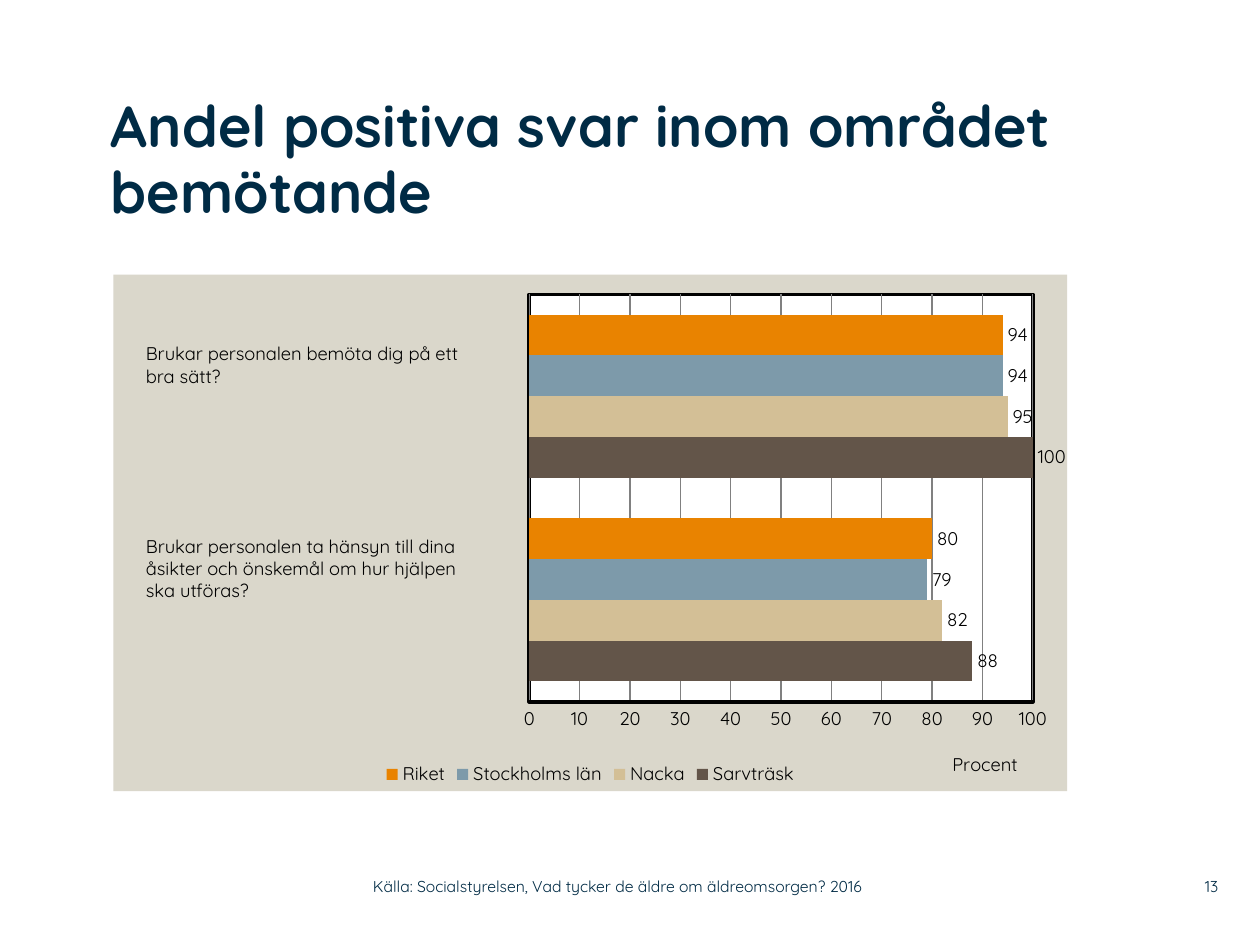
from dataclasses import dataclass

from lxml import etree
from pptx import Presentation
from pptx.chart.data import CategoryChartData
from pptx.dml.color import RGBColor
from pptx.enum.chart import (
    XL_CHART_TYPE, XL_LABEL_POSITION, XL_LEGEND_POSITION, XL_TICK_MARK)
from pptx.enum.text import MSO_ANCHOR, MSO_AUTO_SIZE, PP_ALIGN
from pptx.oxml import parse_xml
from pptx.oxml.ns import nsdecls, qn
from pptx.util import Inches, Pt

BAR_CLUSTERED = XL_CHART_TYPE.BAR_CLUSTERED
OUTSIDE_END = XL_LABEL_POSITION.OUTSIDE_END
LEGEND_BOTTOM = XL_LEGEND_POSITION.BOTTOM
NO_TICK = XL_TICK_MARK.NONE
TOP, MIDDLE = MSO_ANCHOR.TOP, MSO_ANCHOR.MIDDLE
FIT_SHAPE = MSO_AUTO_SIZE.SHAPE_TO_FIT_TEXT
LEFT, RIGHT = PP_ALIGN.LEFT, PP_ALIGN.RIGHT


@dataclass(frozen=True)
class Theme:
    """Font, colours and type sizes of the slide."""
    font: str = "Quicksand"
    navy: str = "002B45"
    black: str = "000000"
    panel: str = "DAD7CB"
    plot: str = "FFFFFF"
    grid: str = "808080"
    title_size: float = 33
    body_size: float = 10.5
    footer_size: float = 9


THEME = Theme()
CATEGORIES = ["1", "2"]
SERIES = [
    ("Sarvträsk", (88, 100), "635549"),
    ("Nacka", (82, 95), "D3BF96"),
    ("Stockholms län", (79, 94), "7D9AAA"),
    ("Riket", (80, 94), "E98300"),
]
QUESTIONS = [
    ((1.06, 2.67, 2.97, 0.45),
     ["Brukar personalen bemöta dig på ett", "bra sätt?"]),
    ((1.06, 4.2, 2.99, 0.63),
     ["Brukar personalen ta hänsyn till dina",
      "åsikter och önskemål om hur hjälpen", "ska utföras?"]),
]


def style_font(font, size, color, bold=False):
    """Apply the theme font with a size and colour."""
    font.name, font.size, font.bold = THEME.font, Pt(size), bold
    font.color.rgb = RGBColor.from_string(color)


def clear_insets(frame):
    """Remove the inner margins of a text frame."""
    frame.margin_left = frame.margin_right = 0
    frame.margin_top = frame.margin_bottom = 0


def add_lines(slide, box, lines, size, color, align=LEFT):
    """Add a text box with one paragraph per line and return its frame."""
    frame = slide.shapes.add_textbox(*map(Inches, box)).text_frame
    frame.word_wrap = True
    for index, line in enumerate(lines):
        paragraph = frame.add_paragraph() if index else frame.paragraphs[0]
        paragraph.alignment = align
        run = paragraph.add_run()
        run.text = line
        style_font(run.font, size, color)
    return frame


def add_title(slide, box, text):
    """Place and format the title placeholder."""
    title = slide.shapes.title
    title.left, title.top, title.width, title.height = map(Inches, box)
    frame = title.text_frame
    frame.word_wrap = True
    frame.vertical_anchor = TOP
    frame.auto_size = MSO_AUTO_SIZE.NONE
    clear_insets(frame)
    paragraph = frame.paragraphs[0]
    paragraph.alignment = LEFT
    paragraph.line_spacing = 0.95
    run = paragraph.add_run()
    run.text = text
    style_font(run.font, THEME.title_size, THEME.navy, bold=True)


def manual_layout(target="", **fractions):
    """Return a chart layout element with edge positions as fractions."""
    layout = etree.Element(qn("c:layout"))
    manual = etree.SubElement(layout, qn("c:manualLayout"))
    values = {"layoutTarget": target} if target else {}
    values.update(xMode="edge", yMode="edge", **fractions)
    for tag, value in values.items():
        etree.SubElement(manual, qn(f"c:{tag}")).set("val", str(value))
    return layout


def drop_layout(element):
    """Remove any layout that a chart element already has."""
    for layout in element.findall(qn("c:layout")):
        element.remove(layout)


def area_format(fill, line=None, width=0):
    """Return shape properties for a chart area."""
    outline = (f'<a:ln w="{Pt(width)}"><a:solidFill><a:srgbClr val="{line}"/>'
               "</a:solidFill></a:ln>" if line else "<a:ln><a:noFill/></a:ln>")
    return parse_xml(
        f'<c:spPr {nsdecls("c", "a")}><a:solidFill><a:srgbClr val="{fill}"/>'
        f"</a:solidFill>{outline}</c:spPr>")


def format_axes(chart):
    """Hide the category axis and format the percent axis."""
    chart.category_axis.visible = False
    axis = chart.value_axis
    axis.minimum_scale, axis.maximum_scale, axis.major_unit = 0, 100, 10
    axis.major_tick_mark = axis.minor_tick_mark = NO_TICK
    axis.format.line.width = Pt(2)
    axis.format.line.color.rgb = RGBColor.from_string(THEME.black)
    axis.has_major_gridlines = True
    grid = axis.major_gridlines.format.line
    grid.width = Pt(0.75)
    grid.color.rgb = RGBColor.from_string(THEME.grid)
    style_font(axis.tick_labels.font, THEME.body_size, THEME.black)
    unit = axis.axis_title.text_frame.paragraphs[0].add_run()
    unit.text = "Procent"
    style_font(unit.font, THEME.body_size, THEME.black)
    title = axis.axis_title._element
    drop_layout(title)
    title.find(qn("c:tx")).addnext(manual_layout(x=0.876, y=0.915))


def add_answer_chart(slide, box):
    """Add the bar chart of positive answers."""
    data = CategoryChartData(number_format="0")
    data.categories = CATEGORIES
    for name, values, _ in SERIES:
        data.add_series(name, values)
    chart = slide.shapes.add_chart(
        BAR_CLUSTERED, *map(Inches, box), data).chart
    style_font(chart.font, THEME.body_size, THEME.black)
    chart.has_title = False
    chart.has_legend = True
    chart.legend.position = LEGEND_BOTTOM
    chart.legend.include_in_layout = False
    style_font(chart.legend.font, THEME.body_size, THEME.black)
    bars = chart.plots[0]
    bars.gap_width, bars.overlap, bars.vary_by_categories = 100, 0, False
    for series, (_, _, color) in zip(bars.series, SERIES):
        series.format.fill.solid()
        series.format.fill.fore_color.rgb = RGBColor.from_string(color)
        labels = series.data_labels
        labels.show_value = True
        labels.position = OUTSIDE_END
        style_font(labels.font, THEME.body_size, THEME.black)
    format_axes(chart)
    chart_root = chart._chartSpace.find(qn("c:chart"))
    chart_root.addnext(area_format(THEME.panel))
    plot_area = chart_root.find(qn("c:plotArea"))
    drop_layout(plot_area)
    plot_area.insert(
        0, manual_layout("inner", x=0.436, y=0.038, w=0.528, h=0.789))
    plot_area.append(area_format(THEME.plot, THEME.black, 2))


def add_questions(slide):
    """Add the survey questions beside their bars."""
    for box, lines in QUESTIONS:
        frame = add_lines(slide, box, lines, THEME.body_size, THEME.black)
        frame.auto_size = FIT_SHAPE


def add_footer(slide, top, height):
    """Add the page number and the source line."""
    for left, width, text, align in (
            (9.2, 0.47, "13", RIGHT),
            (2.96, 4.43, "Källa: Socialstyrelsen, Vad tycker de äldre om "
             "äldreomsorgen? 2016", LEFT)):
        frame = add_lines(slide, (left, top, width, height), [text],
                          THEME.footer_size, THEME.navy, align)
        frame.vertical_anchor = MIDDLE
        clear_insets(frame)


def main():
    """Build and save the slide."""
    deck = Presentation()
    deck.slide_width, deck.slide_height = Inches(10), Inches(7.5)
    slide = deck.slides.add_slide(deck.slide_layouts.get_by_name("Title Only"))
    add_answer_chart(slide, (0.9, 2.18, 7.57, 4.1))
    add_title(slide, (0.88, 0.75, 7.6, 1.42),
              "Andel positiva svar inom området bemötande")
    add_questions(slide)
    add_footer(slide, 6.89, 0.29)
    deck.save("out.pptx")


if __name__ == "__main__":
    main()
